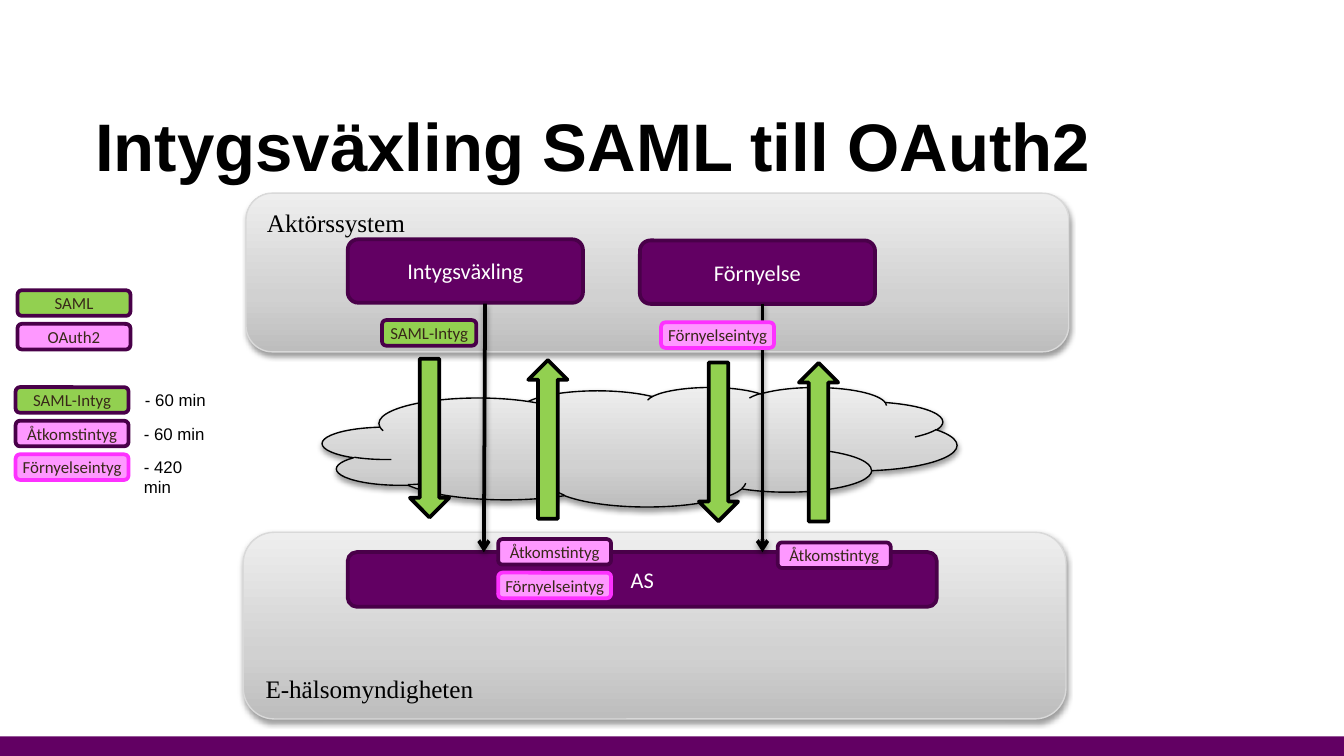
from dataclasses import dataclass
from copy import deepcopy

from lxml import etree
from pptx import Presentation
from pptx.dml.color import RGBColor
from pptx.enum.shapes import MSO_CONNECTOR, MSO_SHAPE
from pptx.enum.text import MSO_ANCHOR, MSO_AUTO_SIZE, PP_ALIGN
from pptx.oxml.ns import qn
from pptx.util import Pt

RECT, ROUND = MSO_SHAPE.RECTANGLE, MSO_SHAPE.ROUNDED_RECTANGLE
CLOUD, DOWN = MSO_SHAPE.CLOUD, MSO_SHAPE.DOWN_ARROW
STRAIGHT = MSO_CONNECTOR.STRAIGHT
TOP, MIDDLE, BOTTOM = MSO_ANCHOR.TOP, MSO_ANCHOR.MIDDLE, MSO_ANCHOR.BOTTOM
LEFT, CENTER = PP_ALIGN.LEFT, PP_ALIGN.CENTER
NO_FIT = MSO_AUTO_SIZE.NONE


@dataclass(frozen=True)
class Theme:
    purple: str = "620063"
    edge: str = "490049"
    green: str = "92D050"
    pink: str = "FE98FF"
    bright: str = "FD31FF"
    black: str = "000000"
    white: str = "FFFFFF"
    ink: str = "382819"
    rim: str = "D9D9D9"
    greys: tuple = (("BDBDBD", 0), ("D1D1D1", 0.35), ("EEEEEE", 1))
    head: float = 36
    panel: float = 13.5
    box: float = 12
    label: float = 9
    sans: str = "Arial"
    serif: str = "Times New Roman"
    body: str = "Calibri"


T = Theme()
LABEL_W, LABEL_H, STEP = 60.5, 13.7, 18

# Kind of token: fill and outline
KINDS = {
    "SAML": (T.green, T.edge),
    "OAuth2": (T.pink, T.edge),
    "SAML-Intyg": (T.green, T.edge),
    "Åtkomstintyg": (T.pink, T.edge),
    "Förnyelseintyg": (T.pink, T.bright),
}


def rgb(code):
    return RGBColor.from_string(code)


def write(frame, text, size, face, color, align=LEFT, anchor=TOP):
    frame.text = text
    frame.vertical_anchor = anchor
    para = frame.paragraphs[0]
    para.alignment = align
    font = para.runs[0].font
    font.size, font.name = Pt(size), face
    font.color.rgb = rgb(color)


def shape(slide, form, area, fill=None, line=None, width=2):
    item = slide.shapes.add_shape(form, *map(Pt, area))
    item.shadow.inherit = False
    if fill:
        item.fill.solid()
        item.fill.fore_color.rgb = rgb(fill)
    if line:
        item.line.color.rgb = rgb(line)
        item.line.width = Pt(width)
    else:
        item.line.fill.background()
    return item


def shade(props):
    """Put a soft shadow below the owner of these shape properties."""
    list_ = props.find(qn("a:effectLst"))
    if list_ is None:
        list_ = etree.SubElement(props, qn("a:effectLst"))
    drop = etree.SubElement(
        list_, qn("a:outerShdw"), blurRad=str(Pt(3.1)), dist=str(Pt(1.6)),
        dir="5400000", rotWithShape="0")
    color = etree.SubElement(drop, qn("a:srgbClr"), val=T.black)
    etree.SubElement(color, qn("a:alpha"), val="38000")


def grey(slide, form, area, line):
    """Add a shape with the grey gradient, dark at its foot, and a shadow."""
    item = shape(slide, form, area, line=line, width=0.75)
    item.fill.gradient()
    item.fill.gradient_angle = 90
    props = item._element.spPr
    first = props.find(".//" + qn("a:gs"))
    first.addnext(deepcopy(first))
    for stop, (color, place) in zip(item.fill.gradient_stops, T.greys):
        stop.color.rgb = rgb(color)
        stop.position = place
    shade(props)
    return item


def panel(slide, text, area, anchor):
    item = grey(slide, ROUND, area, T.rim)
    write(item.text_frame, text, T.panel, T.serif, T.black, anchor=anchor)


def box(slide, text, area):
    item = shape(slide, ROUND, area, T.purple, T.edge)
    write(item.text_frame, text, T.box, T.body, T.white, CENTER, MIDDLE)


def label(slide, text, x, y, width=LABEL_W):
    item = shape(slide, ROUND, (x, y, width, LABEL_H), *KINDS[text])
    frame = item.text_frame
    frame.margin_left = frame.margin_right = Pt(2)
    frame.word_wrap = False
    write(frame, text, T.label, T.body, T.ink, CENTER, MIDDLE)


def note(slide, text, x, y):
    frame = slide.shapes.add_textbox(Pt(x), Pt(y), Pt(50), Pt(18)).text_frame
    frame.word_wrap = False
    write(frame, text, T.label, T.sans, T.black)


def arrow(slide, x, y, turn=0):
    item = shape(slide, DOWN, (x, y, 21, 85), T.green, T.black)
    item.rotation = turn


def flow(slide, x1, x2):
    """Draw the thin arrow from a box down to AS."""
    line = slide.shapes.add_connector(
        STRAIGHT, Pt(x1), Pt(162.7), Pt(x2), Pt(295.9))
    line.line.color.rgb = rgb(T.black)
    line.line.width = Pt(2)
    etree.SubElement(line.line._get_or_add_ln(), qn("a:tailEnd"), type="arrow")
    shade(line._element.spPr)


def title(slide, text):
    item = slide.shapes.title
    item.left, item.top, item.width, item.height = map(
        Pt, (51, 58.3, 556.6, 37.4))
    frame = item.text_frame
    frame.margin_left = frame.margin_right = 0
    frame.margin_top = frame.margin_bottom = 0
    write(frame, text, T.head, T.sans, T.black)
    frame.auto_size = NO_FIT
    frame.word_wrap = True
    para = frame.paragraphs[0]
    para.line_spacing = Pt(41)
    para.runs[0].font.bold = True


def legend(slide):
    for i, name in enumerate(("SAML", "OAuth2")):
        label(slide, name, 9.4, 155.5 + i * STEP)
    times = (("SAML-Intyg", "- 60 min", 70.6),
             ("Åtkomstintyg", "- 60 min", 70),
             ("Förnyelseintyg", "- 420 min", 70))
    for i, (name, time, x) in enumerate(times):
        label(slide, name, 8.4, 207.4 + i * STEP)
        note(slide, time, x, 205.2 + i * STEP)


def main():
    deck = Presentation()
    deck.slide_width, deck.slide_height = Pt(720), Pt(405)
    slide = deck.slides.add_slide(deck.slide_layouts[5])

    shape(slide, RECT, (0, 394.5, 720, 10.5), T.purple)
    title(slide, "Intygsväxling SAML till OAuth2")
    grey(slide, CLOUD, (172.8, 207.4, 339.8, 64), T.black)
    panel(slide, "E-hälsomyndigheten", (130.3, 285.2, 440.8, 100), BOTTOM)
    panel(slide, "Aktörssystem", (131.8, 103.5, 440.8, 85), TOP)
    box(slide, "AS", (186.3, 295.8, 315.6, 29.3))
    box(slide, "Intygsväxling", (186.3, 128.2, 126, 34))
    box(slide, "Förnyelse", (342.8, 128.8, 126, 34))

    for x, y, turn in ((219.6, 192.2, 0), (283, 192.9, 180),
                       (374.4, 194.2, 0), (428, 194.4, 180)):
        arrow(slide, x, y, turn)
    for ends in ((259.9, 259.2), (408.5, 408.5)):
        flow(slide, *ends)

    label(slide, "SAML-Intyg", 204.7, 171.5, 50.5)
    label(slide, "Förnyelseintyg", 354.2, 172.7)
    label(slide, "Åtkomstintyg", 266.9, 288.8)
    label(slide, "Förnyelseintyg", 266.9, 288.8 + STEP)
    label(slide, "Åtkomstintyg", 416.7, 290.6)
    legend(slide)

    deck.save("out.pptx")


if __name__ == "__main__":
    main()
